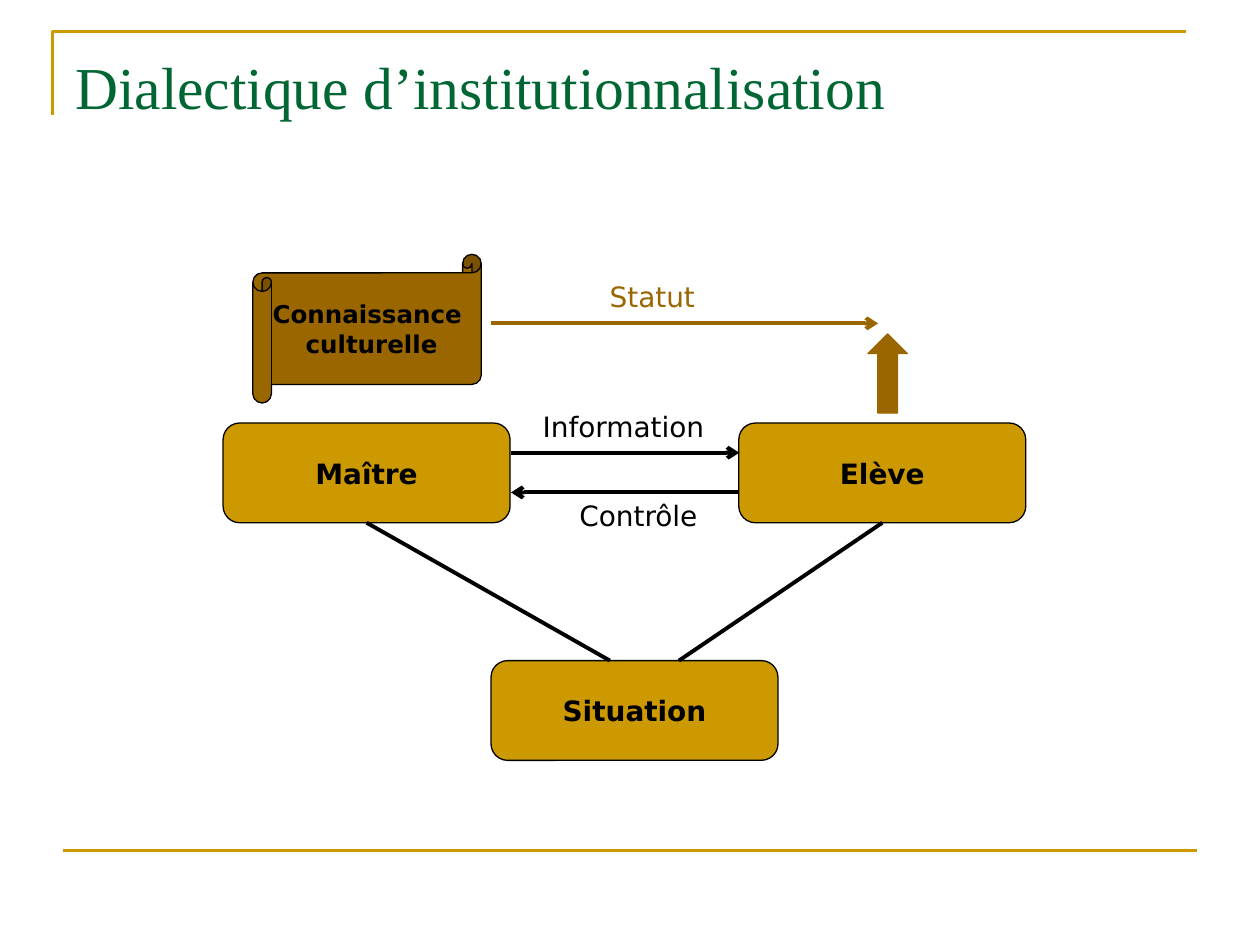
from lxml.etree import SubElement
from pptx import Presentation
from pptx.dml.color import RGBColor
from pptx.enum.shapes import MSO_CONNECTOR, MSO_SHAPE
from pptx.enum.text import MSO_ANCHOR, MSO_AUTO_SIZE, PP_ALIGN
from pptx.oxml.ns import qn
from pptx.util import Pt

GOLD = RGBColor(0xCC, 0x99, 0x00)
BROWN = RGBColor(0x99, 0x66, 0x00)
GREEN = RGBColor(0x00, 0x66, 0x33)
BLACK = RGBColor(0x00, 0x00, 0x00)
BODY_FONT = "DejaVu Sans"
TITLE_FONT = "Times New Roman"

ROLE_WIDTH, ROLE_HEIGHT = 164, 57
BOTTOM = 2  # connection site


def add_run(paragraph, text, size, color, font=BODY_FONT, bold=False):
    run = paragraph.add_run()
    run.text = text
    run.font.size = Pt(size)
    run.font.name = font
    run.font.bold = bold
    run.font.color.rgb = color


def add_figure(slide, preset, left, top, width, height, fill, outline=BLACK):
    figure = slide.shapes.add_shape(preset, Pt(left), Pt(top), Pt(width), Pt(height))
    figure.shadow.inherit = False
    figure.fill.solid()
    figure.fill.fore_color.rgb = fill
    figure.line.color.rgb = outline
    figure.line.width = Pt(0.75)
    return figure


def add_caption(figure, lines, size):
    frame = figure.text_frame
    frame.word_wrap = False
    frame.vertical_anchor = MSO_ANCHOR.MIDDLE
    paragraph = frame.paragraphs[0]
    paragraph.alignment = PP_ALIGN.CENTER
    for number, line in enumerate(lines):
        if number:
            paragraph.add_line_break()
        add_run(paragraph, line, size, BLACK, bold=True)


def add_role(slide, name, left, top):
    role = add_figure(slide, MSO_SHAPE.ROUNDED_RECTANGLE, left, top,
                      ROLE_WIDTH, ROLE_HEIGHT, GOLD)
    add_caption(role, [name], 16)
    return role


def add_line(slide, start, end, color=BLACK, width=2.25, arrow=False):
    line = slide.shapes.add_connector(
        MSO_CONNECTOR.STRAIGHT, *(Pt(value) for value in (*start, *end)))
    line.line.color.rgb = color
    line.line.width = Pt(width)
    if arrow:
        SubElement(line.line._get_or_add_ln(), qn("a:tailEnd"), type="arrow")
    SubElement(line._element.spPr, qn("a:effectLst"))
    return line


def add_label(slide, text, left, top, width, color=BLACK):
    label = slide.shapes.add_textbox(Pt(left), Pt(top), Pt(width), Pt(26.6))
    label.text_frame.word_wrap = False
    label.text_frame.auto_size = MSO_AUTO_SIZE.SHAPE_TO_FIT_TEXT
    add_run(label.text_frame.paragraphs[0], text, 16, color)


def add_title(slide, text):
    title = slide.shapes.add_textbox(Pt(36), Pt(21.6), Pt(648), Pt(90))
    title.text_frame.word_wrap = True
    title.text_frame.margin_top = Pt(7)
    add_run(title.text_frame.paragraphs[0], text, 34, GREEN, font=TITLE_FONT)


def add_frame(slide):
    builder = slide.shapes.build_freeform(Pt(30), Pt(66), scale=1.0)
    builder.add_line_segments([(Pt(30), Pt(18)), (Pt(678), Pt(18))], close=False)
    corner = builder.convert_to_shape()
    corner.shadow.inherit = False
    corner.fill.background()
    corner.line.color.rgb = GOLD
    corner.line.width = Pt(1.5)
    add_line(slide, (36, 486), (684, 486), GOLD, 1.5)


def main():
    prs = Presentation()
    prs.slide_width, prs.slide_height = Pt(720), Pt(540)
    slide = prs.slides.add_slide(prs.slide_layouts[6])

    # Gold frame and title
    add_frame(slide)
    add_title(slide, "Dialectique d’institutionnalisation")

    # The three roles
    teacher = add_role(slide, "Maître", 127.5, 241.7)
    pupil = add_role(slide, "Elève", 422.2, 241.7)
    add_role(slide, "Situation", 280.6, 377.5)

    # Exchange between teacher and pupil
    add_line(slide, (292, 258.7), (422.5, 258.7), arrow=True)
    add_line(slide, (422.5, 281.4), (292, 281.4), arrow=True)
    add_label(slide, "Information", 303, 230.4, 109.4)
    add_label(slide, "Contrôle", 324, 281.4, 82)

    # Links to the situation
    add_line(slide, (212.4, 298), (348.5, 377.5)).begin_connect(teacher, BOTTOM)
    add_line(slide, (507.6, 298), (388, 377.5)).begin_connect(pupil, BOTTOM)

    # Cultural knowledge and its status
    knowledge = add_figure(slide, MSO_SHAPE.HORIZONTAL_SCROLL,
                           144.5, 145.3, 130.5, 85, BROWN)
    add_caption(knowledge, ["Connaissance ", "culturelle"], 14)
    add_line(slide, (280.6, 184.8), (501.8, 184.8), BROWN, arrow=True)
    add_label(slide, "Statut", 341.3, 156.3, 64, BROWN)
    add_figure(slide, MSO_SHAPE.UP_ARROW, 496, 190.8, 22.5, 45.2, BROWN, BROWN)

    prs.save("out.pptx")


if __name__ == "__main__":
    main()
